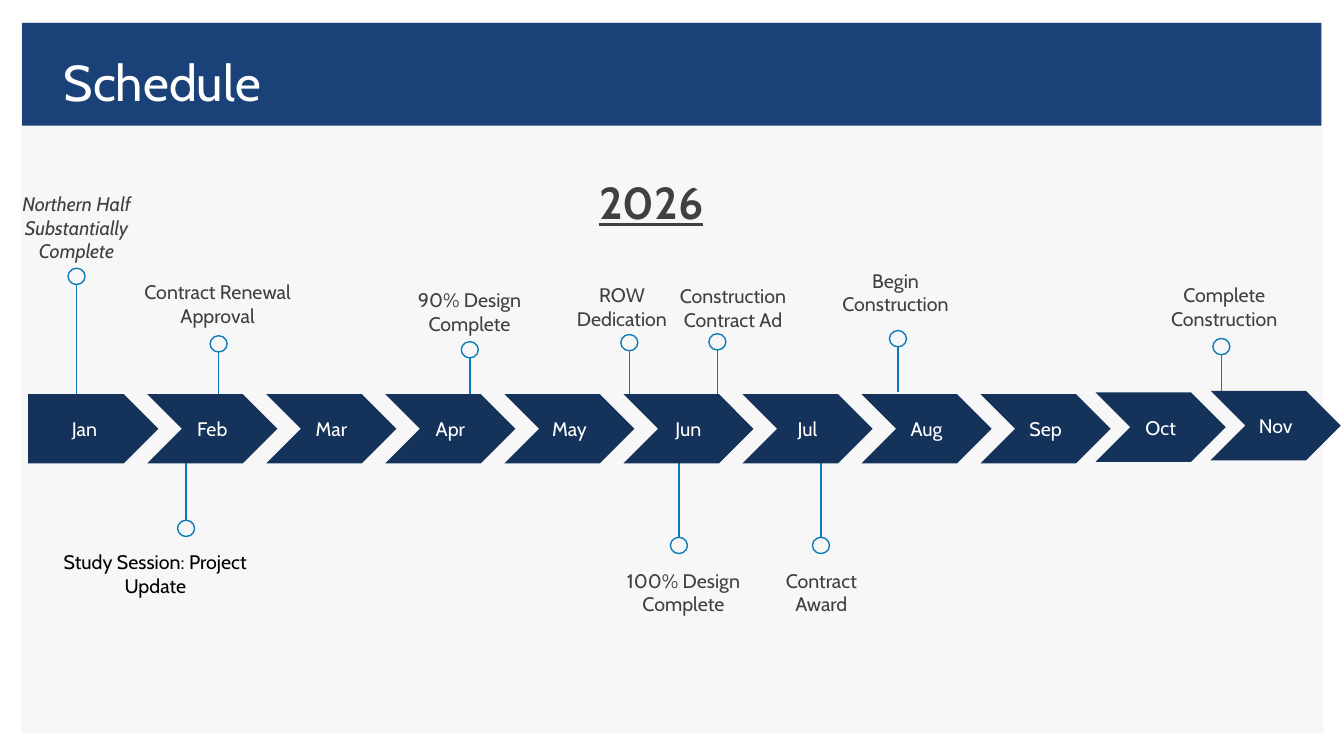
from pptx import Presentation
from pptx import util as u
from pptx.dml.color import RGBColor
from pptx.enum import shapes, text
from pptx.oxml.ns import qn
from lxml import etree


def colour(value):
    return RGBColor.from_string(value)


class ScheduleSlide:
    font = "Cabin"
    panel_fill, banner_fill, arrow_fill = "F7F7F7", "1B4278", "14325A"
    pin_line, ink, white = "0E7BB8", "404040", "FFFFFF"
    ring_width, ring_height = 0.43, 0.41

    def __init__(self, presentation):
        self.slide = presentation.slides.add_slide(presentation.slide_layouts[5])

    def style(self, paragraph, size, fill, align=text.PP_ALIGN.CENTER):
        paragraph.alignment = align
        paragraph.font.name = self.font
        paragraph.font.size = u.Pt(size)
        paragraph.font.color.rgb = colour(fill)

    def block(self, kind, left, top, width, height, fill):
        shape = self.slide.shapes.add_shape(
            kind, u.Cm(left), u.Cm(top), u.Cm(width), u.Cm(height))
        shape.shadow.inherit = False
        shape.fill.solid()
        shape.fill.fore_color.rgb = colour(fill)
        shape.line.fill.background()
        return shape

    def title(self, words, left, top, width, height):
        shape = self.slide.shapes.title
        self.slide.shapes._spTree.append(shape._element)
        shape.left, shape.top = u.Cm(left), u.Cm(top)
        shape.width, shape.height = u.Cm(width), u.Cm(height)
        shape.text_frame.text = words
        shape.text_frame.vertical_anchor = text.MSO_ANCHOR.BOTTOM
        paragraph = shape.text_frame.paragraphs[0]
        paragraph.line_spacing = 0.9
        self.style(paragraph, 36, self.white, text.PP_ALIGN.LEFT)

    def month(self, name, kind, left, top):
        shape = self.block(kind, left, top, 3.28, 1.75, self.arrow_fill)
        shape.text_frame.text = name
        shape.text_frame.vertical_anchor = text.MSO_ANCHOR.MIDDLE
        self.style(shape.text_frame.paragraphs[0], 14, self.white)

    def pin(self, centre, ring_top, stem):
        group = self.slide.shapes.add_group_shape()
        start = ring_top + self.ring_height if stem > 0 else ring_top
        line = group.shapes.add_connector(
            shapes.MSO_CONNECTOR.STRAIGHT,
            u.Cm(centre), u.Cm(start), u.Cm(centre), u.Cm(start + stem))
        etree.SubElement(line._element.spPr, qn("a:effectLst"))
        ring = group.shapes.add_shape(
            shapes.MSO_SHAPE.OVAL, u.Cm(centre - self.ring_width / 2),
            u.Cm(ring_top), u.Cm(self.ring_width), u.Cm(self.ring_height))
        ring.shadow.inherit = False
        ring.fill.background()
        for part in (line, ring):
            part.line.color.rgb = colour(self.pin_line)
            part.line.width = u.Pt(1)

    def label(self, words, left, top, width=5.23, height=1.45, size=14, fill=ink):
        box = self.slide.shapes.add_textbox(
            u.Cm(left), u.Cm(top), u.Cm(width), u.Cm(height))
        frame = box.text_frame
        frame.word_wrap = True
        frame.auto_size = text.MSO_AUTO_SIZE.SHAPE_TO_FIT_TEXT
        frame.text = words
        for paragraph in frame.paragraphs:
            self.style(paragraph, size, fill)
        return frame.paragraphs[0].font


def main():
    presentation = Presentation()
    presentation.slide_width = u.Cm(33.87)
    presentation.slide_height = u.Cm(19.05)
    schedule = ScheduleSlide(presentation)

    rectangle = shapes.MSO_SHAPE.RECTANGLE
    schedule.block(rectangle, 0.53, 0.53, 32.82, 17.96, schedule.panel_fill)
    schedule.block(rectangle, 0.56, 0.58, 32.74, 2.59, schedule.banner_fill)
    schedule.title("Schedule", 1.35, 1.19, 31.19, 1.78)

    short, tall, below = 1.14, 3.24, -2.69
    for centre, ring_top, stem in (
            (1.93, 6.76, tall), (5.51, 8.46, short), (11.84, 8.61, short),
            (15.86, 8.43, short), (18.08, 8.41, short), (22.63, 8.33, short),
            (30.78, 8.53, short), (4.69, 13.11, below),
            (17.11, 13.54, below), (20.69, 13.54, below)):
        schedule.pin(centre, ring_top, stem)

    chevron = shapes.MSO_SHAPE.CHEVRON
    months = ("Jan", "Feb", "Mar", "Apr", "May", "Jun", "Jul", "Aug", "Sep")
    for index, name in enumerate(months):
        kind = chevron if index else shapes.MSO_SHAPE.PENTAGON
        schedule.month(name, kind, 0.71 + 3 * index, 9.93)
    schedule.month("Oct", chevron, 27.61, 9.89)
    schedule.month("Nov", chevron, 30.51, 9.85)

    year = schedule.label("2026", 14.61, 4.29, 3.61, 1.63, size=32)
    year.bold = year.underline = True
    finished = schedule.label("Northern Half Substantially Complete", 0, 4.72, 3.86, 2.06)
    finished.italic = True
    schedule.label("Contract Renewal Approval", 2.87, 6.93)
    schedule.label("90% Design Complete", 9.22, 7.14)
    schedule.label("ROW\nDedication", 13.06, 7.01)
    schedule.label("Construction Contract Ad", 16.81, 7.04, 3.33)
    schedule.label("Begin Construction", 20.68, 6.65, 3.78)
    schedule.label("Complete Construction", 28.24, 7.01)
    schedule.label("Study Session: Project Update", 1.3, 13.74, fill="000000")
    schedule.label("100% Design Complete", 14.61, 14.2)
    schedule.label("Contract Award", 19.28, 14.2, 2.84)

    presentation.save("out.pptx")


if __name__ == "__main__":
    main()
